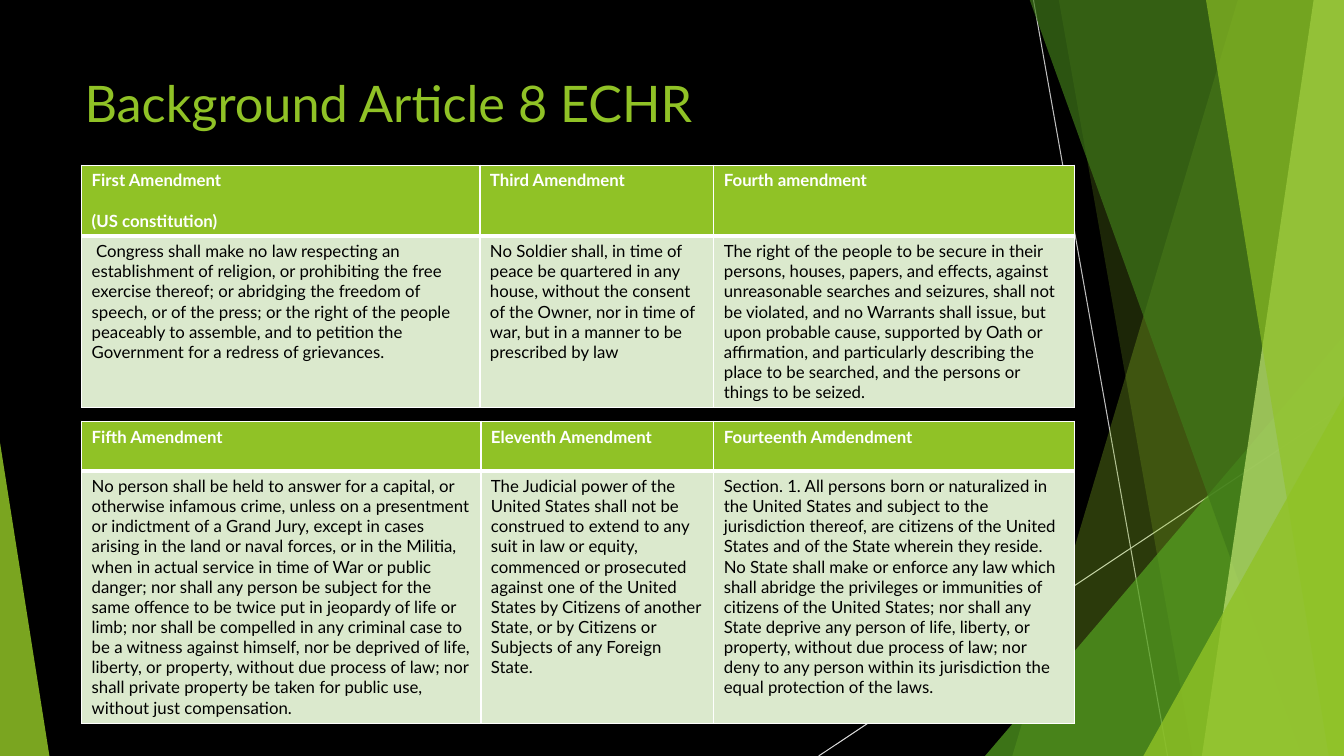
"""Build a slide with two tables of constitutional amendments beside green facets."""
from lxml import etree
from pptx import Presentation
from pptx import util as u
from pptx.dml import color
from pptx.enum import shapes, text
from pptx.oxml import ns

FONT, GREEN, PALE, WHITE, BLACK = "Lato", "90C226", "DBE9CD", "FFFFFF", "000000"
WIDTH, HEIGHT, TOP = 13.33, 7.5, -0.01
TITLE = "Background Article 8 ECHR"
TABLES = [
    {"top": 1.64, "cols": [3.95, 2.32, 3.58], "rows": [0.7, 1.7], "cells": [
        [["First Amendment", "(US constitution)"], ["Third Amendment"], ["Fourth amendment"]],
        [[" Congress shall make no law respecting an establishment of religion, or "
          "prohibiting the free exercise thereof; or abridging the freedom of speech, or of the "
          "press; or the right of the people peaceably to assemble, and to petition the "
          "Government for a redress of grievances."],
         ["No Soldier shall, in time of peace be quartered in any house, without the consent of "
          "the Owner, nor in time of war, but in a manner to be prescribed by law"],
         ["The right of the people to be secure in their persons, houses, papers, and effects, "
          "against unreasonable searches and seizures, shall not be violated, and no Warrants "
          "shall issue, but upon probable cause, supported by Oath or affirmation, and "
          "particularly describing the place to be searched, and the persons or things to be "
          "seized."]]]},
    {"top": 4.18, "cols": [3.96, 2.31, 3.58], "rows": [0.49, 2.51], "cells": [
        [["Fifth Amendment"], ["Eleventh Amendment"], ["Fourteenth Amdendment"]],
        [["No person shall be held to answer for a capital, or otherwise infamous crime, unless "
          "on a presentment or indictment of a Grand Jury, except in cases arising in the land "
          "or naval forces, or in the Militia, when in actual service in time of War or public "
          "danger; nor shall any person be subject for the same offence to be twice put in "
          "jeopardy of life or limb; nor shall be compelled in any criminal case to be a witness "
          "against himself, nor be deprived of life, liberty, or property, without due process "
          "of law; nor shall private property be taken for public use, without just "
          "compensation."],
         ["The Judicial power of the United States shall not be construed to extend to any suit "
          "in law or equity, commenced or prosecuted against one of the United States by "
          "Citizens of another State, or by Citizens or Subjects of any Foreign State."],
         ["Section. 1. All persons born or naturalized in the United States and subject to the "
          "jurisdiction thereof, are citizens of the United States and of the State wherein they "
          "reside. No State shall make or enforce any law which shall abridge the privileges or "
          "immunities of citizens of the United States; nor shall any State deprive any person "
          "of life, liberty, or property, without due process of law; nor deny to any person "
          "within its jurisdiction the equal protection of the laws."]]]},
]
LINES = [((10.25, 0), (11.58, HEIGHT), "BFBFBF"), ((WIDTH, 4.03), (8.12, HEIGHT), "D9D9D9")]
# facet: top-left x, bottom-left x; triangle: left, top, width, apex
FACETS = [
    ("facet", (12.28, 10.04), GREEN, 30),
    ("facet", (10.5, 11.83), GREEN, 20),
    ("triangle", (9.77, 3.33, 3.56, 1), "54A021", 72),
    ("facet", (10.21, 12.91), "3F7819", 70),
    ("facet", (13.03, 11.92), "C0E474", 70),
    ("facet", (11.96, 13.18), GREEN, 65),
    ("triangle", (11.34, 3.93, 1.99, 1), GREEN, 80),
    ("triangle", (0, 4.39, 0.49, 0), GREEN, 85),
]


def rgb(value):
    """Turn a hex string into a colour."""
    return color.RGBColor.from_string(value)


def paint(target, value):
    """Give a shape, cell or background a solid fill."""
    target.fill.solid()
    target.fill.fore_color.rgb = rgb(value)


def style(p, size, value, bold=False):
    """Set the font of a paragraph."""
    p.font.name, p.font.size, p.font.bold = FONT, u.Pt(size), bold
    p.font.color.rgb = rgb(value)


def add_line(s, start, end, value):
    """Draw a thin straight line."""
    sp = s.shapes.add_connector(shapes.MSO_CONNECTOR.STRAIGHT,
                                *(u.Inches(n) for n in start + end))
    sp.line.color.rgb = rgb(value)
    sp.line.width = u.Pt(0.75)
    etree.SubElement(sp._element.spPr, ns.qn("a:effectLst"))


def add_facet(s, kind, geometry, value, opacity):
    """Draw one translucent facet or triangle that reaches the bottom edge."""
    if kind == "facet":
        upper, lower = geometry
        points = [(upper, TOP), (WIDTH, TOP), (WIDTH, HEIGHT), (lower, HEIGHT)]
        points = [(u.Inches(x), u.Inches(y)) for x, y in points]
        builder = s.shapes.build_freeform(*points[0])
        builder.add_line_segments(points[1:], close=True)
        sp = builder.convert_to_shape()
    else:
        left, top, width, apex = geometry
        sp = s.shapes.add_shape(shapes.MSO_SHAPE.ISOSCELES_TRIANGLE, u.Inches(left),
                                u.Inches(top), u.Inches(width), u.Inches(HEIGHT - top))
        sp.adjustments[0] = apex
    sp.shadow.inherit = False
    sp.line.fill.background()
    paint(sp, value)
    clr = sp._element.spPr.find(".//" + ns.qn("a:srgbClr"))
    etree.SubElement(clr, ns.qn("a:alpha"), val=str(opacity * 1000))


def add_borders(cell, widths):
    """Put white borders on a cell, widths in points by side."""
    tc_pr = cell._tc.get_or_add_tcPr()
    for i, side in enumerate("LRTB"):
        ln = etree.Element(ns.qn("a:ln" + side), w=str(u.Pt(widths[side])))
        fill = etree.SubElement(ln, ns.qn("a:solidFill"))
        etree.SubElement(fill, ns.qn("a:srgbClr"), val=WHITE)
        tc_pr.insert(i, ln)


def add_amendments(s, top, cols, rows, cells):
    """Add a table with a green header row over a pale row."""
    table = s.shapes.add_table(len(rows), len(cols), u.Inches(0.81), u.Inches(top),
                               u.Inches(sum(cols)), u.Inches(sum(rows))).table
    for column, width in zip(table.columns, cols):
        column.width = u.Inches(width)
    for i, height in enumerate(rows):
        header = i == 0
        table.rows[i].height = u.Inches(height)
        for j, paragraphs in enumerate(cells[i]):
            cell = table.cell(i, j)
            paint(cell, GREEN if header else PALE)
            add_borders(cell, {"L": 1, "R": 1, "T": 1 if header else 3, "B": 3 if header else 1})
            tf = cell.text_frame
            for k, words in enumerate(paragraphs):
                p = tf.add_paragraph() if k else tf.paragraphs[0]
                p.text = words
                p.space_before = u.Pt(14.4 if k else 0)
                style(p, 12, WHITE if header else BLACK, header)


def main():
    """Build and save the slide."""
    prs = Presentation()
    prs.slide_width, prs.slide_height = u.Inches(WIDTH), u.Inches(HEIGHT)
    s = prs.slides.add_slide(prs.slide_layouts[6])
    paint(s.background, BLACK)
    for line in LINES:
        add_line(s, *line)
    for facet in FACETS:
        add_facet(s, *facet)
    tf = s.shapes.add_textbox(u.Inches(0.74), u.Inches(0.67), u.Inches(9.4),
                              u.Inches(1.44)).text_frame
    tf.word_wrap = True
    tf.vertical_anchor = text.MSO_ANCHOR.TOP
    p = tf.paragraphs[0]
    p.text = TITLE
    style(p, 36, GREEN)
    for table in TABLES:
        add_amendments(s, **table)
    prs.save("out.pptx")


if __name__ == "__main__":
    main()
